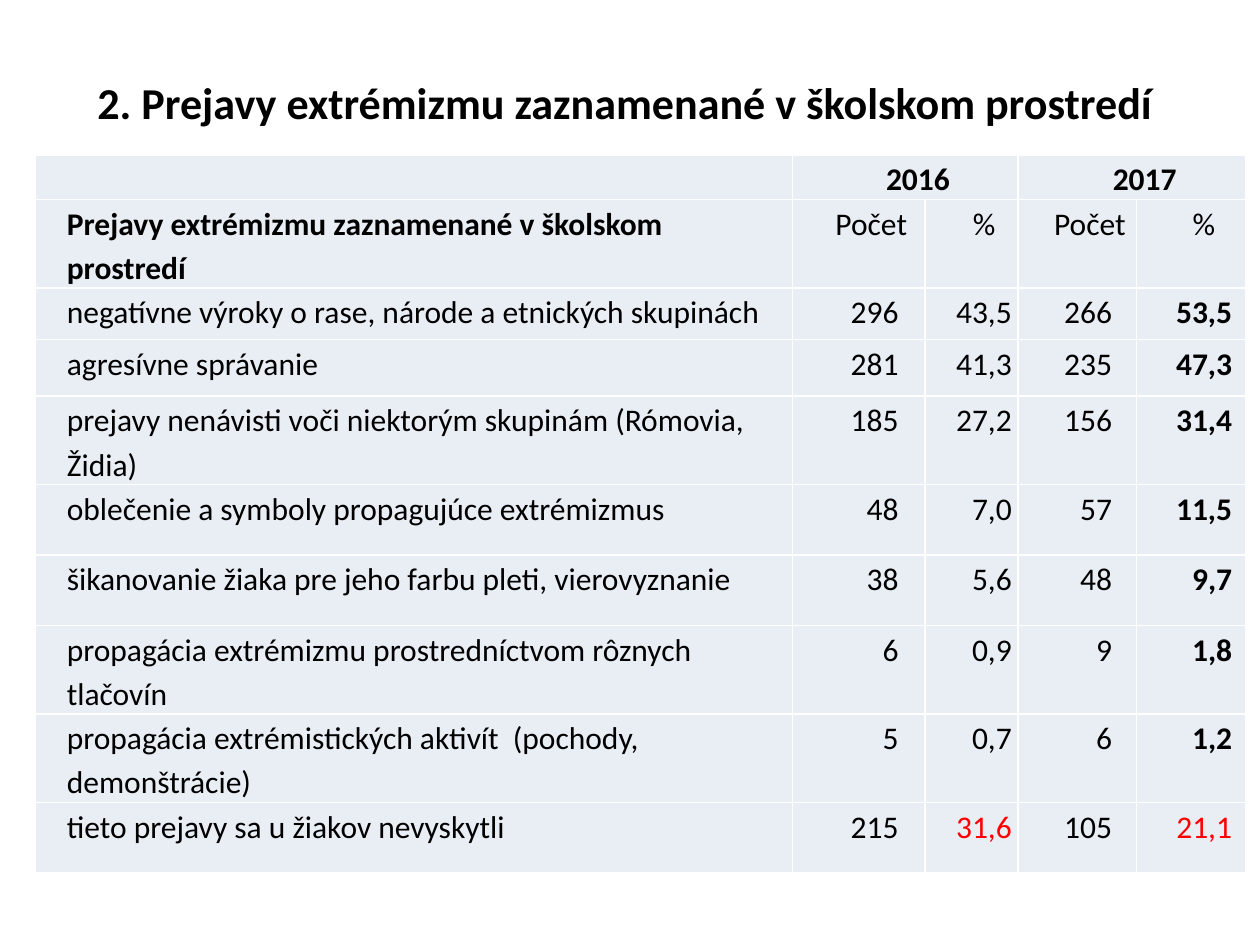
import pptx
import pptx.util
import pptx.dml.color
import pptx.enum.text

Pt = pptx.util.Pt
ALIGN = pptx.enum.text.PP_ALIGN
ANCHOR = pptx.enum.text.MSO_ANCHOR

COLORS = {"text": "000000", "accent": "FF0000", "cell": "E9EDF4"}
FONT = "Calibri"
TITLE = "2. Prejavy extrémizmu zaznamenané v školskom prostredí "
YEARS = ["2016", "2017"]
HEADINGS = ["Prejavy extrémizmu zaznamenané v školskom prostredí", "Počet", "%", "Počet", "%"]
DATA = [
    ["negatívne výroky o rase, národe a etnických skupinách", "296", "43,5", "266", "53,5"],
    ["agresívne správanie", "281", "41,3", "235", "47,3"],
    ["prejavy nenávisti voči niektorým skupinám (Rómovia, Židia)", "185", "27,2", "156", "31,4"],
    ["oblečenie a symboly propagujúce extrémizmus", "48", "7,0", "57", "11,5"],
    ["šikanovanie žiaka pre jeho farbu pleti, vierovyznanie", "38", "5,6", "48", "9,7"],
    ["propagácia extrémizmu prostredníctvom rôznych tlačovín", "6", "0,9", "9", "1,8"],
    ["propagácia extrémistických aktivít  (pochody, demonštrácie)", "5", "0,7", "6", "1,2"],
    ["tieto prejavy sa u žiakov nevyskytli", "215", "31,6", "105", "21,1"],
]
COL_WIDTHS = [432.7, 75.6, 53.3, 67.7, 62.6]
ROW_HEIGHTS = [19.4, 40.3, 29.5, 32.4, 33.8] + [40.3] * 5
NUMBER_INSETS = [3.6, 15, 3.6, 14, 8]


def format_font(font, size, bold=False, color="text"):
    font.name = FONT
    font.size = Pt(size)
    font.bold = bold
    font.color.rgb = pptx.dml.color.RGBColor.from_string(COLORS[color])


def add_title(s):
    sp = s.shapes.title
    sp.left, sp.top, sp.width, sp.height = Pt(36), Pt(21.6), Pt(648), Pt(72.7)
    tf = sp.text_frame
    tf.vertical_anchor = ANCHOR.MIDDLE
    tf.text = TITLE
    p = tf.paragraphs[0]
    p.alignment = ALIGN.CENTER
    format_font(p.font, 25.2, bold=True)


def fill_cell(cell, text="", align=ALIGN.LEFT, left=18, right=3.6, bold=False, color="text"):
    cell.fill.solid()
    cell.fill.fore_color.rgb = pptx.dml.color.RGBColor.from_string(COLORS["cell"])
    cell.margin_left, cell.margin_right = Pt(left), Pt(right)
    cell.margin_top = cell.margin_bottom = Pt(0)
    cell.text = text
    p = cell.text_frame.paragraphs[0]
    p.alignment = align
    p.line_spacing = 1.15
    format_font(p.font, 18, bold, color)


def add_header(table):
    for cell in table.rows[0].cells:
        fill_cell(cell)
    for year, col in zip(YEARS, (1, 3)):
        table.cell(0, col).merge(table.cell(0, col + 1))
        fill_cell(table.cell(0, col), year, ALIGN.CENTER, bold=True)
    for col, text in enumerate(HEADINGS):
        align = ALIGN.CENTER if col else ALIGN.LEFT
        fill_cell(table.cell(1, col), text, align, bold=col == 0)


def add_data(table):
    for row, values in enumerate(DATA, start=2):
        is_last = row == len(DATA) + 1
        fill_cell(table.cell(row, 0), values[0])
        for col in range(1, len(values)):
            fill_cell(
                table.cell(row, col), values[col], ALIGN.RIGHT,
                left=3.6, right=NUMBER_INSETS[col],
                bold=col == 4 and not is_last,
                color="accent" if is_last and col in (2, 4) else "text",
            )


def add_table(s):
    frame = s.shapes.add_table(
        len(ROW_HEIGHTS), len(COL_WIDTHS), Pt(20.2), Pt(88.6),
        Pt(sum(COL_WIDTHS)), Pt(sum(ROW_HEIGHTS)),
    )
    table = frame.table
    table.first_row = False
    table.horz_banding = False
    for column, width in zip(table.columns, COL_WIDTHS):
        column.width = Pt(width)
    for row, height in zip(table.rows, ROW_HEIGHTS):
        row.height = Pt(height)
    add_header(table)
    add_data(table)


def main():
    prs = pptx.Presentation()
    prs.slide_width, prs.slide_height = Pt(720), Pt(540)
    s = prs.slides.add_slide(prs.slide_layouts[5])
    add_title(s)
    add_table(s)
    prs.save("out.pptx")


if __name__ == "__main__":
    main()
